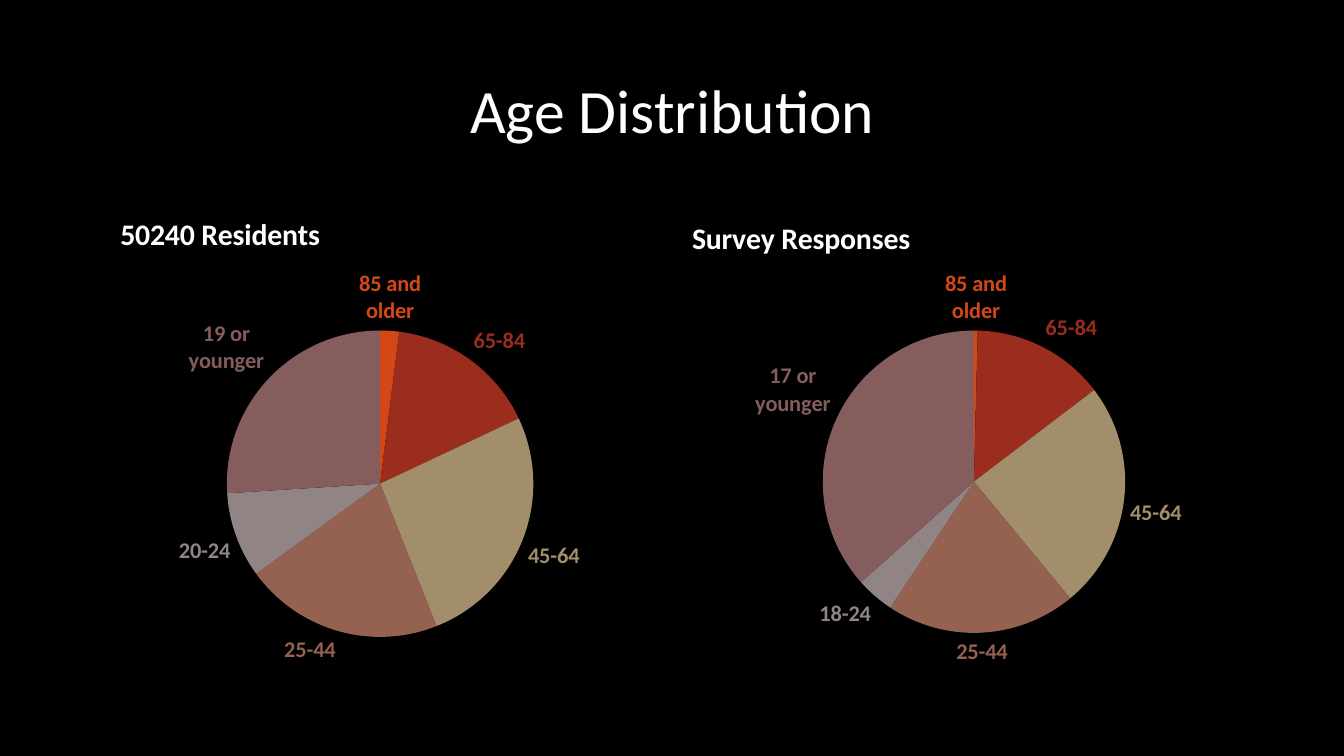
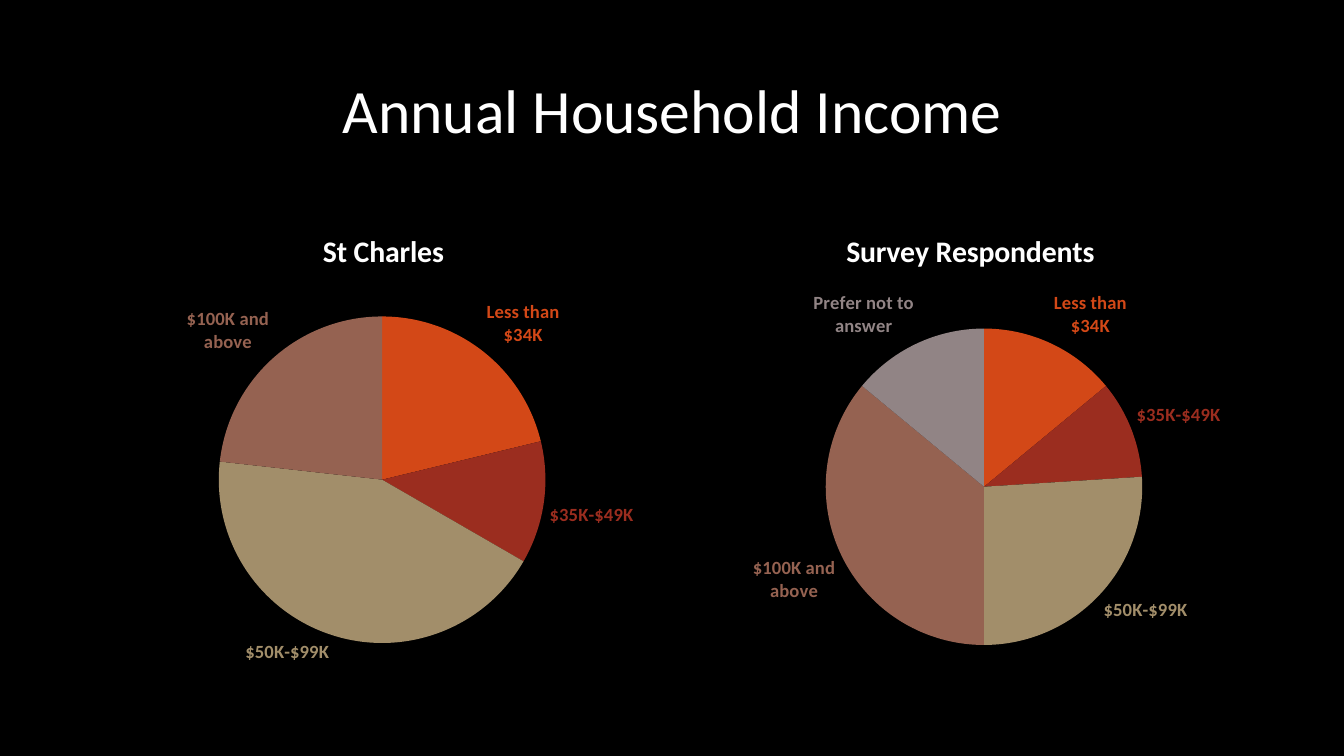
from lxml import etree
from pptx import Presentation
from pptx.chart.data import CategoryChartData
from pptx.dml.color import RGBColor
from pptx.enum.chart import XL_CHART_TYPE as ChartType, XL_LABEL_POSITION as LabelPos
from pptx.enum.text import MSO_ANCHOR as Anchor, PP_ALIGN as Align
from pptx.oxml.ns import qn
from pptx.util import Inches, Pt

FONT = "Calibri"
BLACK = RGBColor(0x00, 0x00, 0x00)
WHITE = RGBColor(0xFF, 0xFF, 0xFF)
SLICE_COLORS = [
    RGBColor(0xD3, 0x48, 0x17), RGBColor(0x9B, 0x2D, 0x1F),
    RGBColor(0xA2, 0x8E, 0x6A), RGBColor(0x95, 0x62, 0x51),
    RGBColor(0x91, 0x84, 0x85), RGBColor(0x85, 0x5D, 0x5D),
]

TITLE_BOX = (0.92, 0.4, 11.5, 1.45)
PIE_LEFTS = (0.92, 6.75)
PIE_WIDTH = 5.67
PIE_BOTTOM = 6.76

# Heading corners, pie centers and radii are in inches on the slide.
SLIDES = [
    {"title": "Age Distribution", "top": 1.85, "label_size": 16, "pies": [
        {"heading": "50240 Residents", "heading_at": (1.14, 2.07),
         "center": (3.77, 4.8), "radius": 1.52,
         "shares": [("85 and older", 2), ("65-84", 16), ("45-64", 26),
                    ("25-44", 21), ("20-24", 9), ("19 or younger", 26)]},
        {"heading": "Survey Responses", "heading_at": (6.81, 2.11),
         "center": (9.66, 4.78), "radius": 1.5,
         "shares": [("85 and older", 0.4), ("65-84", 14), ("45-64", 24),
                    ("25-44", 20), ("18-24", 4), ("17 or younger", 36)]},
    ]},
    {"title": "Annual Household Income", "top": 2, "label_size": 13.3, "pies": [
        {"heading": "St Charles", "heading_at": (3.15, 2.23),
         "center": (3.79, 4.76), "radius": 1.62,
         "shares": [("Less than $34K", 21), ("$35K-$49K", 12),
                    ("$50K-$99K", 43), ("$100K and above", 23)]},
        {"heading": "Survey Respondents", "heading_at": (8.34, 2.23),
         "center": (9.76, 4.83), "radius": 1.57,
         "shares": [("Less than $34K", 14), ("$35K-$49K", 10),
                    ("$50K-$99K", 26), ("$100K and above", 36),
                    ("Prefer not to answer", 14)]},
    ]},
]


def style_font(font, size, color=WHITE, bold=False):
    font.name = FONT
    font.size = Pt(size)
    font.bold = bold
    font.color.rgb = color


def write_text(frame, text, align=Align.CENTER, spacing=None, **font_format):
    frame.text = text
    paragraph = frame.paragraphs[0]
    paragraph.alignment = align
    paragraph.line_spacing = spacing
    style_font(paragraph.runs[0].font, **font_format)


def place_in_chart(part, index, **fractions):
    """Give a chart part a manual layout, in fractions of the chart's size."""
    for old in part.findall(qn("c:layout")):
        part.remove(old)
    layout = etree.Element(qn("c:layout"))
    manual = etree.SubElement(layout, qn("c:manualLayout"))
    settings = {"xMode": "edge", "yMode": "edge"}
    if "w" in fractions:
        settings = {"layoutTarget": "inner", **settings}
    for tag, value in {**settings, **fractions}.items():
        text = value if isinstance(value, str) else f"{value:.4f}"
        etree.SubElement(manual, qn(f"c:{tag}")).set("val", text)
    part.insert(index, layout)


def label_slices(series, count, size):
    labels = series.data_labels
    labels.show_category_name = True
    labels.show_value = False
    labels.position = LabelPos.OUTSIDE_END
    style_font(labels.font, size, SLICE_COLORS[0], bold=True)
    for index, color in enumerate(SLICE_COLORS[:count]):
        point = series.points[index]
        point.format.fill.solid()
        point.format.fill.fore_color.rgb = color
        point.format.line.fill.background()
        style_font(point.data_label.font, size, color, bold=True)
        point.data_label.position = LabelPos.OUTSIDE_END


def add_pie(slide, left, top, pie, label_size):
    height = PIE_BOTTOM - top
    data = CategoryChartData()
    data.categories = [name for name, _ in pie["shares"]]
    data.add_series(pie["heading"], [share for _, share in pie["shares"]])
    chart = slide.shapes.add_chart(
        ChartType.PIE, Inches(left), Inches(top),
        Inches(PIE_WIDTH), Inches(height), data).chart
    style_font(chart.font, 10)
    chart.has_legend = False
    chart.plots[0].vary_by_categories = True

    chart.has_title = True
    write_text(chart.chart_title.text_frame, pie["heading"], size=21.3, bold=True)
    x, y = pie["heading_at"]
    place_in_chart(chart.chart_title.element, 1,
                   x=(x - left) / PIE_WIDTH, y=(y - top) / height)

    label_slices(chart.plots[0].series[0], len(pie["shares"]), label_size)
    for label in chart.element.iter(qn("c:dLbl")):
        label.find(qn("c:showVal")).set("val", "0")
        label.find(qn("c:showCatName")).set("val", "1")

    (x, y), radius = pie["center"], pie["radius"]
    place_in_chart(next(chart.element.iter(qn("c:plotArea"))), 0,
                   x=(x - radius - left) / PIE_WIDTH,
                   y=(y - radius - top) / height,
                   w=2 * radius / PIE_WIDTH, h=2 * radius / height)


def main():
    deck = Presentation()
    deck.slide_width, deck.slide_height = Inches(13.33), Inches(7.5)
    background = deck.slide_master.background.fill
    background.solid()
    background.fore_color.rgb = BLACK
    layout = deck.slide_layouts.get_by_name("Title Only")
    heading = layout.placeholders[0]
    heading.left, heading.top, heading.width, heading.height = map(Inches, TITLE_BOX)
    heading.text_frame.vertical_anchor = Anchor.MIDDLE

    for content in SLIDES:
        slide = deck.slides.add_slide(layout)
        write_text(slide.shapes.title.text_frame, content["title"],
                   spacing=0.9, size=44)
        for left, pie in zip(PIE_LEFTS, content["pies"]):
            add_pie(slide, left, content["top"], pie, content["label_size"])
    deck.save("out.pptx")


if __name__ == "__main__":
    main()
